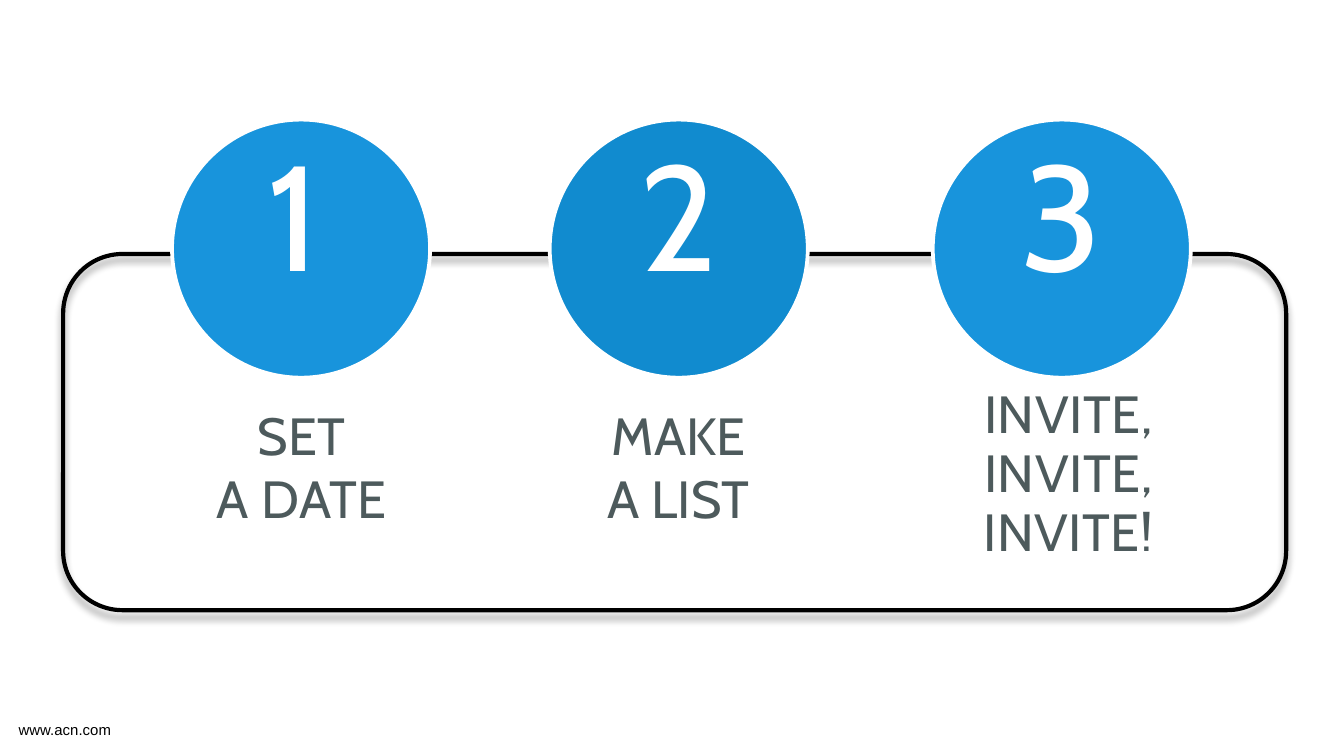
from dataclasses import dataclass

from lxml.etree import SubElement
from pptx import Presentation
from pptx.dml.color import RGBColor
from pptx.enum.shapes import MSO_SHAPE
from pptx.enum.text import PP_ALIGN
from pptx.oxml.ns import qn
from pptx.util import Inches, Pt


@dataclass(frozen=True)
class Theme:
    black: str = "000000"
    white: str = "FFFFFF"
    blue: str = "1894DC"
    deep_blue: str = "118BCF"
    slate: str = "4D5A5C"
    heading_font: str = "Cabin"
    footer_font: str = "Arial"
    number_size: int = 80
    caption_size: int = 28
    footer_size: int = 8


THEME = Theme()
CIRCLE_SIZE = 1.92


def add_text(shapes, box, lines, font, size, color, tracking=0, **paragraph_format):
    """Write one paragraph for each line; a vertical tab breaks a line."""
    frame = shapes.add_textbox(*map(Inches, box)).text_frame
    frame.word_wrap = True
    for index, line in enumerate(lines):
        para = frame.add_paragraph() if index else frame.paragraphs[0]
        para.text = line
        for name, value in paragraph_format.items():
            if index or name != "space_before":
                setattr(para, name, value)
        for span in para.runs:
            for name, value in {"name": font, "size": Pt(size)}.items():
                setattr(span.font, name, value)
            span.font.color.rgb = RGBColor.from_string(color)
            if tracking:
                span.font._element.set("spc", str(tracking))


def add_soft_shadow(shape, color):
    effects = SubElement(shape._element.spPr, qn("a:effectLst"))
    shadow = SubElement(effects, qn("a:outerShdw"), blurRad=str(Pt(4)),
                        dist=str(Pt(3.4)), dir="5400000", rotWithShape="0")
    tint = SubElement(shadow, qn("a:srgbClr"), val=color)
    SubElement(tint, qn("a:alpha"), val="40000")


def add_frame(page, box):
    frame = page.shapes.add_shape(MSO_SHAPE.ROUNDED_RECTANGLE, *map(Inches, box))
    frame.fill.background()
    frame.line.color.rgb = RGBColor.from_string(THEME.black)
    frame.line.width = Pt(2.25)
    add_soft_shadow(frame, THEME.black)


def add_badge(page, left, top, number, color, number_shift=0):
    """Numbered circle, with its number in a box over it."""
    group = page.shapes.add_group_shape()
    circle = group.shapes.add_shape(
        MSO_SHAPE.OVAL, *map(Inches, (left, top, CIRCLE_SIZE, CIRCLE_SIZE)))
    circle.shadow.inherit = False
    circle.fill.solid()
    circle.fill.fore_color.rgb = RGBColor.from_string(color)
    circle.line.color.rgb = RGBColor.from_string(THEME.white)
    circle.line.width = Pt(2)
    add_text(group.shapes, (left + number_shift, top + 0.23, CIRCLE_SIZE, 1.8),
             [number], THEME.heading_font, THEME.number_size, THEME.white,
             alignment=PP_ALIGN.CENTER, line_spacing=0.8)


def add_caption(page, box, lines, tracking=0, **paragraph_format):
    add_text(page.shapes, box, lines, THEME.heading_font, THEME.caption_size,
             THEME.slate, tracking, alignment=PP_ALIGN.CENTER, **paragraph_format)


def add_footer(page, box):
    add_text(page.shapes, box, ["www.acn.com"], THEME.footer_font,
             THEME.footer_size, THEME.black)


def main():
    # A page of 16 to 9
    deck = Presentation()
    deck.slide_width = Inches(10)
    deck.slide_height = deck.slide_width * 9 // 16
    page = deck.slides.add_slide(deck.slide_layouts[6])

    # Footer and frame
    add_footer(page, (0.04, 5.31, 1.65, 0.24))
    add_frame(page, (0.47, 1.89, 9.1, 2.65))

    # Numbered circles on the top edge of the frame
    badge_top = 0.89
    add_badge(page, 1.28, badge_top, "1", THEME.blue, number_shift=-0.05)
    add_badge(page, 4.09, badge_top, "2", THEME.deep_blue)
    add_badge(page, 6.94, badge_top, "3", THEME.blue)

    # Captions under the circles
    caption_top = 2.95
    add_caption(page, (1.06, caption_top, 2.37, 0.76), ["SET\vA DATE"],
                tracking=30, space_after=Pt(6))
    add_caption(page, (3.63, caption_top, 2.84, 1.05), ["MAKE\vA LIST"])
    add_caption(page, (6.47, caption_top, 2.96, 1.05),
                ["INVITE,", "INVITE,", "INVITE!"], tracking=30,
                line_spacing=0.6, space_before=Pt(5.6), space_after=Pt(6))

    deck.save("out.pptx")


if __name__ == "__main__":
    main()
